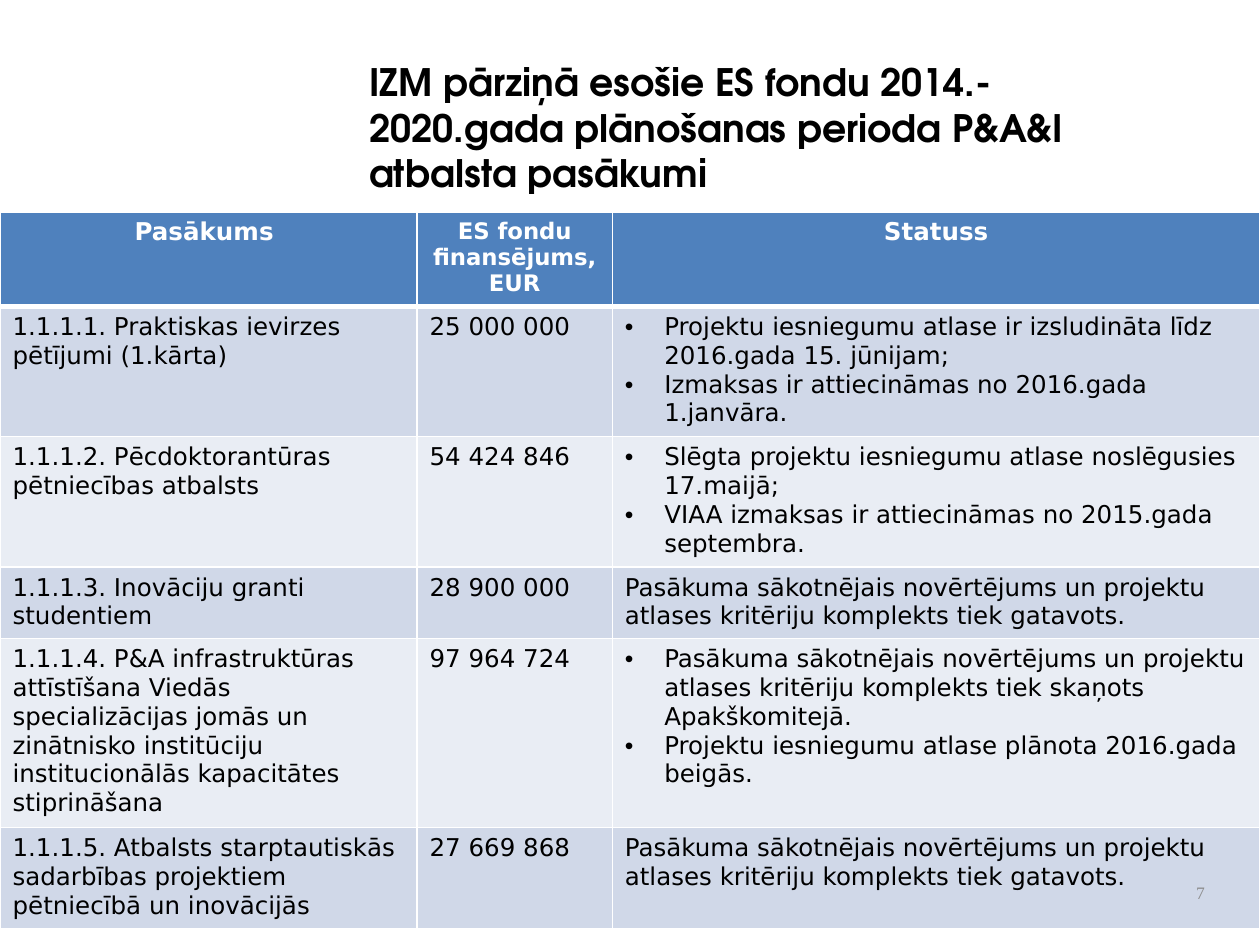
from lxml import etree
from pptx import Presentation
from pptx.dml.color import RGBColor
from pptx.enum.text import MSO_ANCHOR, PP_ALIGN
from pptx.oxml.ns import qn
from pptx.util import Pt

LEFT, CENTER, RIGHT = PP_ALIGN.LEFT, PP_ALIGN.CENTER, PP_ALIGN.RIGHT
TOP, MIDDLE = MSO_ANCHOR.TOP, MSO_ANCHOR.MIDDLE

BLACK = RGBColor(0x00, 0x00, 0x00)
WHITE = RGBColor(0xFF, 0xFF, 0xFF)
GREY = RGBColor(0x8C, 0x8C, 0x8C)
BLUE = RGBColor(0x4F, 0x81, 0xBD)
BANDS = (RGBColor(0xD0, 0xD8, 0xE8), RGBColor(0xE9, 0xED, 0xF4))

TITLE_FONT, BODY_FONT, PAGE_FONT = "TeX Gyre Adventor", "DejaVu Sans", "Times New Roman"
TITLE = "IZM pārziņā esošie ES fondu 2014.-2020.gada plānošanas perioda P&A&I atbalsta pasākumi"

WIDTHS = (238.3, 111.6, 370.1)
HEIGHTS = (52, 73, 73, 40, 105.8, 56.5)
INDENT = 22.5

HEADS = (("Pasākums ", 14), ("ES fondu finansējums, EUR", 13), ("Statuss", 14))
DRAFT = ("Pasākuma sākotnējais novērtējums un projektu atlases kritēriju komplekts tiek gatavots.",)
# Each row: measure, funding, status points
ROWS = (
    ("1.1.1.1. Praktiskas ievirzes pētījumi (1.kārta)", "25 000 000",
     ("Projektu iesniegumu atlase ir izsludināta līdz 2016.gada 15. jūnijam;",
      "Izmaksas ir attiecināmas no 2016.gada 1.janvāra.")),
    ("1.1.1.2. Pēcdoktorantūras pētniecības atbalsts", "54 424 846",
     ("Slēgta projektu iesniegumu atlase noslēgusies 17.maijā;",
      "VIAA izmaksas ir attiecināmas no 2015.gada septembra.")),
    ("1.1.1.3. Inovāciju granti studentiem", "28 900 000", DRAFT),
    ("1.1.1.4. P&A infrastruktūras attīstīšana Viedās specializācijas jomās un "
     "zinātnisko institūciju institucionālās kapacitātes stiprināšana", "97 964 724",
     ("Pasākuma sākotnējais novērtējums un projektu atlases kritēriju komplekts "
      "tiek skaņots Apakškomitejā.",
      "Projektu iesniegumu atlase plānota 2016.gada beigās.")),
    ("1.1.1.5. Atbalsts starptautiskās sadarbības projektiem pētniecībā un inovācijās",
     "27 669 868", DRAFT),
)


def style(para, font, size, color, bold=False, align=LEFT):
    para.alignment = align
    for run in para.runs:
        run.font.name = font
        run.font.size = Pt(size)
        run.font.bold = bold
        run.font.color.rgb = color


def add_text(slide, text, box, anchor, *look, **more):
    frame = slide.shapes.add_textbox(*map(Pt, box)).text_frame
    frame.word_wrap = True
    frame.vertical_anchor = anchor
    frame.text = text
    style(frame.paragraphs[0], *look, **more)


def add_bullet(para):
    props = para._p.get_or_add_pPr()
    props.set("marL", str(Pt(INDENT)))
    props.set("indent", str(-Pt(INDENT)))
    etree.SubElement(props, qn("a:buFont"), typeface="Arial")
    etree.SubElement(props, qn("a:buChar"), char="•")


def set_edges(cell, top, bottom):
    """Draw white borders, one point wide at the sides."""
    props = cell._tc.get_or_add_tcPr()
    for spot, (side, width) in enumerate(zip("LRTB", (1, 1, top, bottom))):
        line = etree.Element(qn("a:ln" + side), w=str(Pt(width)))
        fill = etree.SubElement(line, qn("a:solidFill"))
        etree.SubElement(fill, qn("a:srgbClr"), val=str(WHITE))
        props.insert(spot, line)


def fill_cell(cell, lines, back, size, color, bold=False, align=LEFT):
    """Write the lines, with bullets when there are several."""
    cell.fill.solid()
    cell.fill.fore_color.rgb = back
    frame = cell.text_frame
    frame.text = "\n".join(lines)
    for para in frame.paragraphs:
        if len(lines) > 1:
            add_bullet(para)
        style(para, BODY_FONT, size, color, bold, align)


def add_grid(slide):
    shape = slide.shapes.add_table(len(HEIGHTS), len(WIDTHS), Pt(0), Pt(121),
                                   Pt(sum(WIDTHS)), Pt(sum(HEIGHTS)))
    table = shape.table
    for col, width in zip(table.columns, WIDTHS):
        col.width = Pt(width)
    for row, height in zip(table.rows, HEIGHTS):
        row.height = Pt(height)
    for col, (head, size) in enumerate(HEADS):
        cell = table.cell(0, col)
        fill_cell(cell, (head,), BLUE, size, WHITE, True, CENTER)
        set_edges(cell, 1, 3)
    for row, (name, funds, status) in enumerate(ROWS, 1):
        for col, lines in enumerate(((name,), (funds,), status)):
            cell = table.cell(row, col)
            fill_cell(cell, lines, BANDS[(row - 1) % 2], 14, BLACK)
            set_edges(cell, 3 if row == 1 else 1, 1)


def main():
    deck = Presentation()
    deck.slide_width, deck.slide_height = Pt(720), Pt(540)
    slide = deck.slides.add_slide(deck.slide_layouts[6])
    add_text(slide, TITLE, (203.8, 30.2, 480, 81.4), TOP,
             TITLE_FONT, 21.6, BLACK, bold=True)
    add_grid(slide)
    add_text(slide, "7", (671.8, 498.2, 23.8, 23.8), MIDDLE,
             PAGE_FONT, 10, GREY, align=RIGHT)
    deck.save("out.pptx")


if __name__ == "__main__":
    main()
